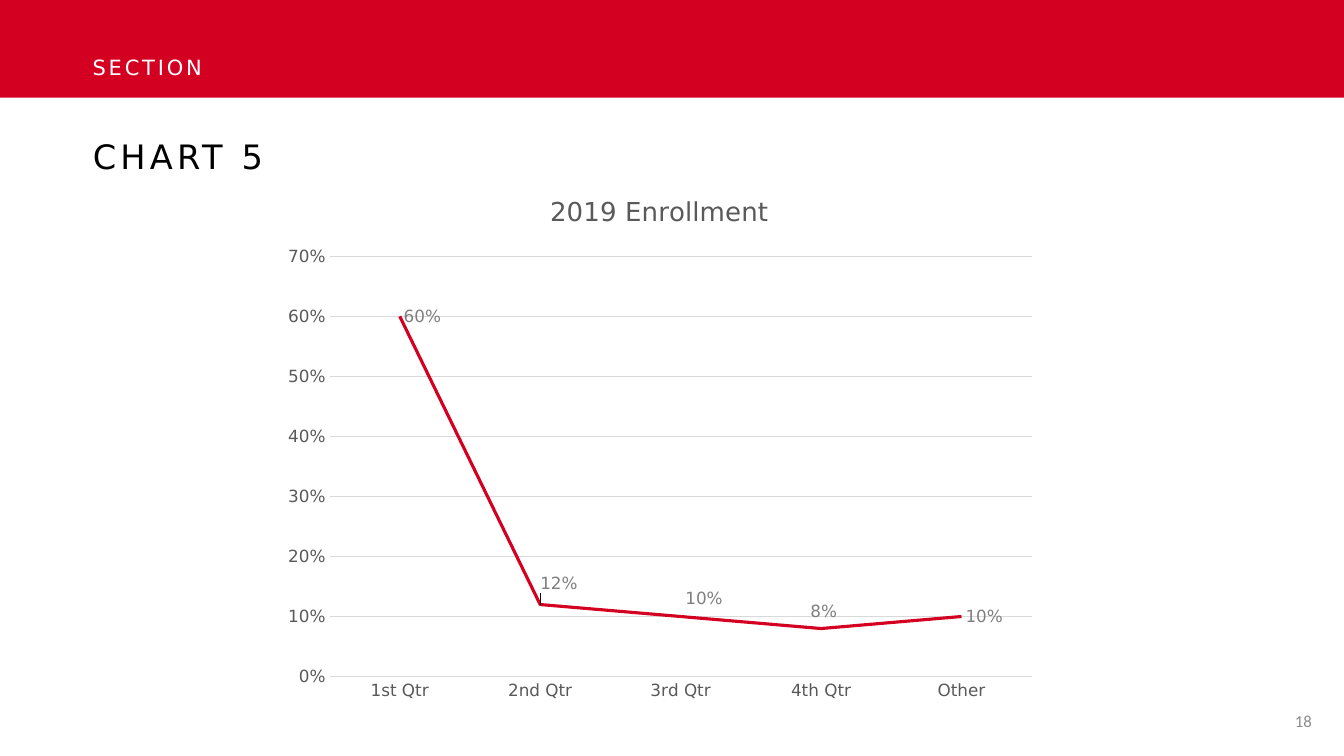
from dataclasses import dataclass

from lxml import etree
from pptx import Presentation
from pptx import util as u
from pptx.chart import data as chart_data
from pptx.dml.color import RGBColor
from pptx.enum import chart as chart_enum
from pptx.enum import shapes, text
from pptx.oxml import ns

COLORS = {
    "red": "D40021",
    "white": "FFFFFF",
    "black": "000000",
    "axis": "595959",
    "label": "7F7F7F",
    "grid": "D9D9D9",
    "number": "8C8C8C",
}
FONT = "DejaVu Sans"
PERCENT = "0%"
CHART_TITLE = "2019 Enrollment"
ENROLLMENT = {"1st Qtr": 0.6, "2nd Qtr": 0.12, "3rd Qtr": 0.1, "4th Qtr": 0.08, "Other": 0.1}
LABEL_OFFSETS = {1: (-0.005, -0.039), 2: (0.001, -0.033), 3: (-0.019, -0.032)}
PLOT_LAYOUT = {
    "layoutTarget": "inner", "xMode": "edge", "yMode": "edge",
    "x": 0.074, "y": 0.154, "w": 0.907, "h": 0.781,
}


@dataclass(frozen=True)
class Label:
    content: str
    box: tuple[float, float, float, float]
    size: float
    color: str
    font: str = FONT
    spacing: int = 0
    align: text.PP_ALIGN = text.PP_ALIGN.LEFT
    anchor: text.MSO_ANCHOR = text.MSO_ANCHOR.TOP


SECTION = Label("SECTION", (0.82, 0.49, 4.95, 0.4), 15, "white", spacing=2)
TITLE = Label("CHART 5", (0.82, 1.3, 5.68, 0.41), 24, "black", spacing=3)
PAGE_NUMBER = Label(
    "18", (10, 6.95, 3.11, 0.4), 12, "number", font="Calibri",
    align=text.PP_ALIGN.RIGHT, anchor=text.MSO_ANCHOR.MIDDLE,
)


def set_attributes(target, values: dict) -> None:
    for name, value in values.items():
        setattr(target, name, value)


def rgb(name: str) -> RGBColor:
    return RGBColor.from_string(COLORS[name])


def format_font(font, size: float, color: str, name: str = FONT) -> None:
    set_attributes(font, {"size": u.Pt(size), "name": name, "bold": False})
    font.color.rgb = rgb(color)


def format_line(line, color: str, width: float) -> None:
    line.color.rgb = rgb(color)
    line.width = u.Pt(width)


def write_label(shape, label: Label) -> None:
    edges = ("left", "top", "width", "height")
    set_attributes(shape, {edge: u.Inches(value) for edge, value in zip(edges, label.box)})
    frame = shape.text_frame
    set_attributes(frame, {
        "word_wrap": True,
        "auto_size": text.MSO_AUTO_SIZE.NONE,
        "vertical_anchor": label.anchor,
    })
    paragraph = frame.paragraphs[0]
    set_attributes(paragraph, {"alignment": label.align, "space_before": u.Pt(0)})
    run = paragraph.add_run()
    run.text = label.content
    format_font(run.font, label.size, label.color, label.font)
    if label.spacing:
        run.font._element.set("spc", str(label.spacing * 100))


def manual_layout(values: dict) -> etree.ElementBase:
    layout = etree.Element(ns.qn("c:layout"))
    manual = etree.SubElement(layout, ns.qn("c:manualLayout"))
    for name, value in values.items():
        etree.SubElement(manual, ns.qn(f"c:{name}"), val=str(value))
    return layout


def format_axes(chart) -> None:
    for axis in (chart.category_axis, chart.value_axis):
        set_attributes(axis, {
            "major_tick_mark": chart_enum.XL_TICK_MARK.NONE,
            "minor_tick_mark": chart_enum.XL_TICK_MARK.NONE,
        })
        format_font(axis.tick_labels.font, 12, "axis")
    format_line(chart.category_axis.format.line, "grid", 0.75)
    value_axis = chart.value_axis
    set_attributes(value_axis, {
        "minimum_scale": 0, "maximum_scale": 0.7, "major_unit": 0.1,
        "has_major_gridlines": True,
    })
    value_axis.format.line.fill.background()
    format_line(value_axis.major_gridlines.format.line, "grid", 0.75)
    set_attributes(value_axis.tick_labels, {
        "number_format": PERCENT, "number_format_is_linked": False,
    })


def format_series(series) -> None:
    series.smooth = False
    series.marker.style = chart_enum.XL_MARKER_STYLE.NONE
    format_line(series.format.line, "red", 2.25)
    labels = series.data_labels
    set_attributes(labels, {
        "show_value": True,
        "number_format": PERCENT,
        "number_format_is_linked": False,
        "position": chart_enum.XL_LABEL_POSITION.RIGHT,
    })
    format_font(labels.font, 12, "label")
    for index, (x, y) in LABEL_OFFSETS.items():
        label = series.points[index].data_label
        format_font(label.font, 12, "label")
        label.position = chart_enum.XL_LABEL_POSITION.RIGHT
        index_element = series._element.xpath(f".//c:dLbl/c:idx[@val='{index}']")[0]
        index_element.addnext(manual_layout({"x": x, "y": y}))


def add_enrollment_chart(slide) -> None:
    data = chart_data.CategoryChartData(number_format=PERCENT)
    data.categories = list(ENROLLMENT)
    data.add_series(CHART_TITLE, list(ENROLLMENT.values()))
    chart = slide.shapes.add_chart(
        chart_enum.XL_CHART_TYPE.LINE,
        u.Inches(2.7), u.Inches(1.72), u.Inches(7.68), u.Inches(5.34), data,
    ).chart
    format_font(chart.font, 10, "black")
    set_attributes(chart, {"has_legend": False, "has_title": True})
    title = chart.chart_title
    title.include_in_layout = False
    title.text_frame.text = CHART_TITLE
    format_font(title.text_frame.paragraphs[0].runs[0].font, 18.6, "axis")
    chart.plots[0].vary_by_categories = False
    format_axes(chart)
    format_series(chart.plots[0].series[0])
    plot_area = chart._chartSpace.xpath("c:chart/c:plotArea")[0]
    for layout in plot_area.xpath("c:layout"):
        plot_area.remove(layout)
    plot_area.insert(0, manual_layout(PLOT_LAYOUT))


def main() -> None:
    presentation = Presentation()
    set_attributes(presentation, {"slide_width": u.Inches(13.33), "slide_height": u.Inches(7.5)})
    slide = presentation.slides.add_slide(presentation.slide_layouts[5])
    band = slide.shapes.add_shape(
        shapes.MSO_SHAPE.RECTANGLE, 0, 0, presentation.slide_width, u.Inches(0.97)
    )
    band.shadow.inherit = False
    band.fill.solid()
    band.fill.fore_color.rgb = rgb("red")
    band.line.fill.background()
    write_label(slide.shapes.title, TITLE)
    for label in (SECTION, PAGE_NUMBER):
        write_label(slide.shapes.add_textbox(0, 0, 0, 0), label)
    add_enrollment_chart(slide)
    presentation.save("out.pptx")


if __name__ == "__main__":
    main()
